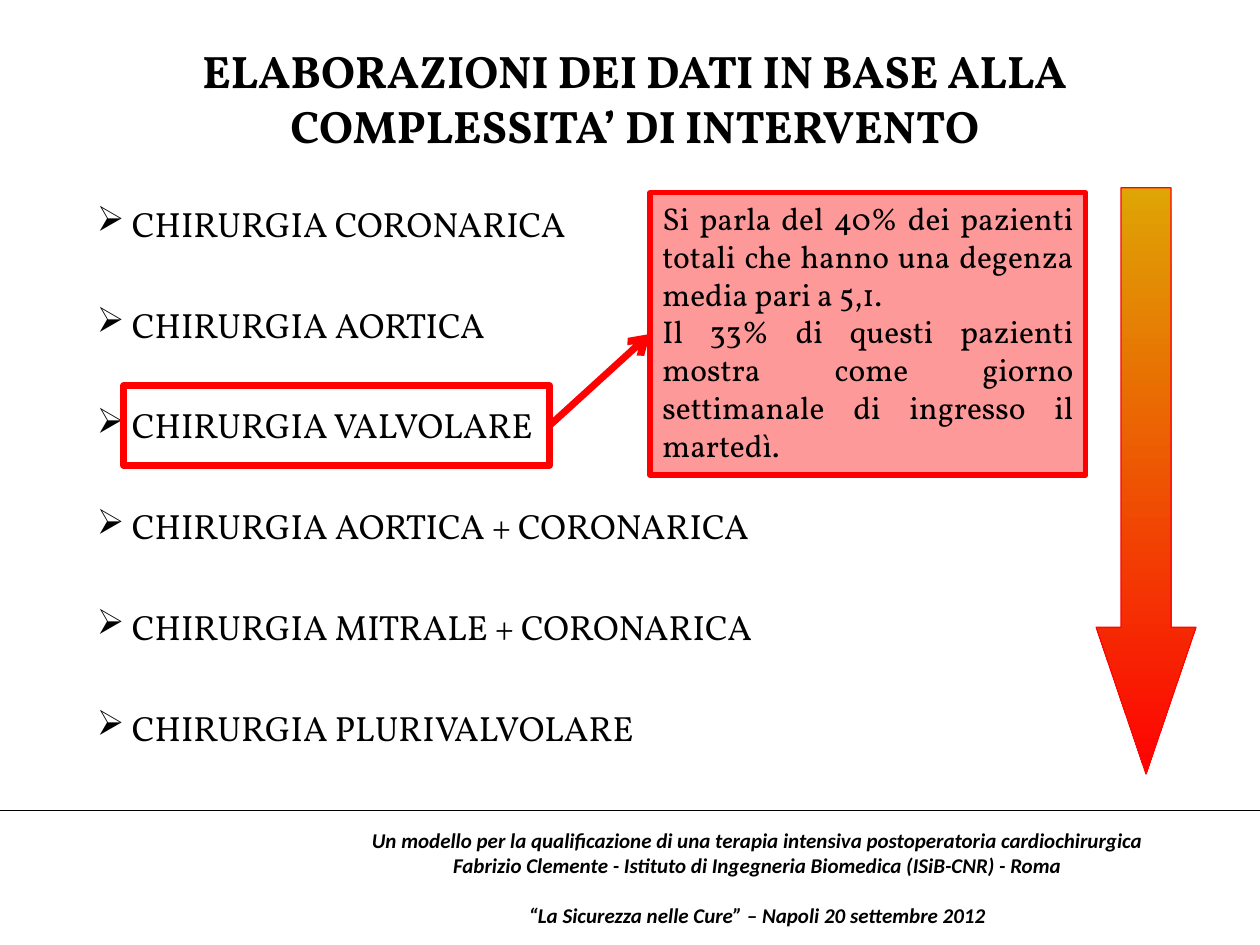
from lxml import etree
from pptx import Presentation
from pptx.dml.color import RGBColor
from pptx.enum.shapes import MSO_CONNECTOR, MSO_SHAPE
from pptx.enum.text import MSO_ANCHOR, PP_ALIGN
from pptx.oxml.ns import qn
from pptx.util import Pt

CENTER, JUSTIFY = PP_ALIGN.CENTER, PP_ALIGN.JUSTIFY
TOP, MIDDLE = MSO_ANCHOR.TOP, MSO_ANCHOR.MIDDLE
STRAIGHT = MSO_CONNECTOR.STRAIGHT
RECTANGLE, DOWN_ARROW = MSO_SHAPE.RECTANGLE, MSO_SHAPE.DOWN_ARROW

BLACK = RGBColor(0x00, 0x00, 0x00)
RED = RGBColor(0xFF, 0x00, 0x00)
SIGNAL_RED = RGBColor(0xFE, 0x02, 0x02)
EDGE_RED = RGBColor(0xFE, 0x06, 0x06)
AMBER = RGBColor(0xDE, 0xA5, 0x04)

SERIF, SANS = "Vollkorn", "Calibri"

SURGERY_TYPES = [
    "CHIRURGIA CORONARICA",
    "CHIRURGIA AORTICA",
    "CHIRURGIA VALVOLARE",
    "CHIRURGIA AORTICA + CORONARICA",
    "CHIRURGIA MITRALE + CORONARICA",
    "CHIRURGIA PLURIVALVOLARE",
]
FINDINGS = [
    "Si parla del 40% dei pazienti totali che hanno una degenza media pari a 5,1.",
    "Il 33% di questi pazienti mostra come giorno settimanale di ingresso il martedì.",
]
FOOTER_LINES = [
    "Un modello per la qualificazione di una terapia intensiva postoperatoria cardiochirurgica",
    "Fabrizio Clemente - Istituto di Ingegneria Biomedica (ISiB-CNR) - Roma",
    "“La Sicurezza nelle Cure” – Napoli 20 settembre 2012",
]


def write_lines(frame, lines, face, size, align=None, bold=False, italic=False):
    """Write one paragraph per line and return the paragraphs."""
    frame.word_wrap = True
    for i, line in enumerate(lines):
        paragraph = frame.paragraphs[0] if i == 0 else frame.add_paragraph()
        paragraph.alignment = align
        run = paragraph.add_run()
        run.text = line
        run.font.name = face
        run.font.size = Pt(size)
        run.font.bold = bold
        run.font.italic = italic
        run.font.color.rgb = BLACK
    return frame.paragraphs


def add_rule(start, end, color, width):
    """Add a straight connector without a shadow."""
    rule = slide.shapes.add_connector(STRAIGHT, *map(Pt, start + end))
    rule.line.color.rgb = color
    rule.line.width = Pt(width)
    etree.SubElement(rule._element.spPr, qn("a:effectLst"))
    return rule


prs = Presentation()
prs.slide_width, prs.slide_height = Pt(720), Pt(540)
slide = prs.slides.add_slide(prs.slide_layouts[5])
shapes = slide.shapes

# Title
title = shapes.title
title.left, title.top, title.width, title.height = Pt(42.5), Pt(21), Pt(641), Pt(70)
title.text_frame.vertical_anchor = TOP
write_lines(title.text_frame,
            ["ELABORAZIONI DEI DATI IN BASE ALLA COMPLESSITA’ DI INTERVENTO"],
            SERIF, 26, CENTER, bold=True)

# Surgery types in order of complexity
surgery_list = shapes.add_textbox(Pt(48.24), Pt(107.3), Pt(629), Pt(323))
for i, item in enumerate(write_lines(surgery_list.text_frame, SURGERY_TYPES, SERIF, 20)):
    item.line_spacing = 1.2
    if i:
        item.space_before = Pt(28.8)
    properties = item._p.get_or_add_pPr()
    properties.set("marL", str(Pt(20)))
    properties.set("indent", str(-Pt(20)))
    etree.SubElement(properties, qn("a:buChar"), char="➢")

# Complexity arrow
complexity_arrow = shapes.add_shape(DOWN_ARROW, Pt(626.4), Pt(107.3), Pt(57), Pt(335))
complexity_arrow.shadow.inherit = False
complexity_arrow.adjustments[0] = 0.5
complexity_arrow.adjustments[1] = 1.47
complexity_arrow.fill.gradient()
complexity_arrow.fill.gradient_angle = 270
for stop, color in zip(complexity_arrow.fill.gradient_stops, (AMBER, SIGNAL_RED)):
    stop.color.rgb = color
complexity_arrow.line.color.rgb = EDGE_RED
complexity_arrow.line.width = Pt(0.75)

# Findings on valve surgery
findings_box = shapes.add_shape(RECTANGLE, Pt(371.5), Pt(110.2), Pt(249), Pt(161.3))
findings_box.fill.solid()
findings_box.fill.fore_color.rgb = SIGNAL_RED
fill_color = findings_box._element.spPr.find(qn("a:solidFill"))[0]
etree.SubElement(fill_color, qn("a:alpha"), val="40000")
findings_box.line.width = Pt(3)
findings_box.text_frame.vertical_anchor = TOP
write_lines(findings_box.text_frame, FINDINGS, SERIF, 18, JUSTIFY)

valve_frame = shapes.add_shape(RECTANGLE, Pt(70.6), Pt(220.5), Pt(243.4), Pt(45.4))
valve_frame.fill.background()
valve_frame.line.width = Pt(4)
for box in (findings_box, valve_frame):
    box.shadow.inherit = False
    box.line.color.rgb = RED

findings_link = add_rule((314, 243), (371, 191), SIGNAL_RED, 4)
findings_link.begin_connect(valve_frame, 3)
findings_link.end_connect(findings_box, 1)
etree.SubElement(findings_link.line._get_or_add_ln(), qn("a:tailEnd"), type="arrow")

# Footer
add_rule((0, 463), (720, 463), BLACK, 0.75)
footer = shapes.add_textbox(Pt(195.8), Pt(463), Pt(474), Pt(77))
footer.text_frame.vertical_anchor = MIDDLE
footer_paragraphs = write_lines(footer.text_frame, FOOTER_LINES, SANS, 12, CENTER,
                                bold=True, italic=True)
footer_paragraphs[-1].space_before = Pt(14.6)

prs.save("out.pptx")
